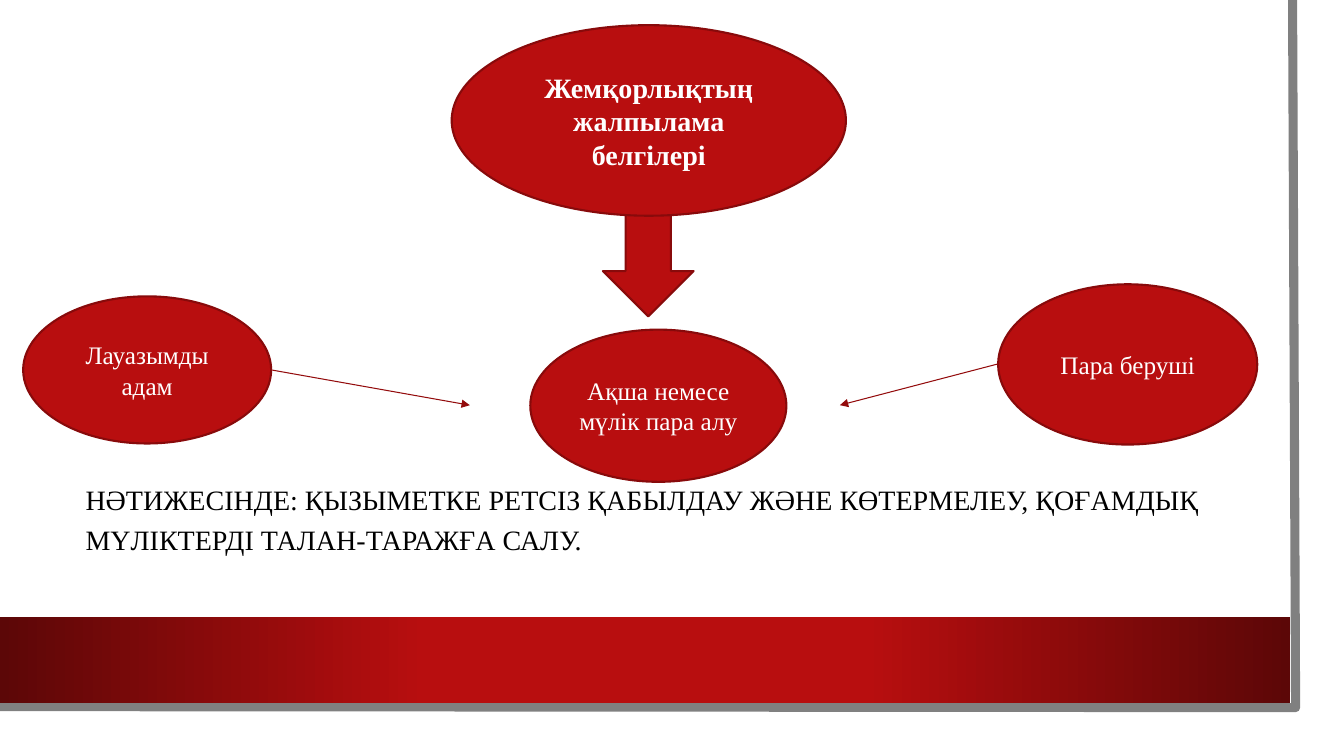
import pptx
import pptx.util
import pptx.dml.color
import pptx.enum.shapes
import pptx.enum.text
import pptx.oxml
import pptx.oxml.ns
from lxml import etree

Inches = pptx.util.Inches
Pt = pptx.util.Pt
SHAPES = pptx.enum.shapes.MSO_SHAPE
ALIGN = pptx.enum.text.PP_ALIGN
FONT = "Times New Roman"
COLORS = {
    "red": "B80E0F",
    "dark_red": "5C0707",
    "outline": "880A0B",
    "arrow": "930B0C",
    "frame": "808080",
    "white": "FFFFFF",
    "black": "000000",
}
OVALS = [
    (4.48, 0.25, 3.91, 1.89, "Жемқорлықтың жалпылама белгілері", 20, True),
    (0.23, 2.94, 2.46, 1.46, "Лауазымды адам", 18, False),
    (5.26, 3.27, 2.54, 1.51, "Ақша немесе мүлік пара алу", 18, False),
    (9.9, 2.82, 2.57, 1.59, "Пара беруші", 18, False),
]
ARROWS = [((2.69, 3.67), (4.66, 4.02)), ((9.9, 3.61), (8.33, 4.02))]
BAND_STOPS = [(0, "dark_red"), (33, "red"), (67, "red"), (100, "dark_red")]


def rgb(name):
    return pptx.dml.color.RGBColor.from_string(COLORS[name])


def set_line(line, color, width):
    line.color.rgb = rgb(color)
    line.width = Pt(width)


def write_text(shape, text, size, color, alignment, bold=False):
    frame = shape.text_frame
    frame.word_wrap = True
    frame.vertical_anchor = pptx.enum.text.MSO_ANCHOR.MIDDLE
    paragraph = frame.paragraphs[0]
    paragraph.alignment = alignment
    run = paragraph.add_run()
    run.text = text
    run.font.name = FONT
    run.font.size = Pt(size)
    run.font.bold = bold
    run.font.color.rgb = rgb(color)
    return paragraph


def add_red_shape(slide, kind, left, top, width, height):
    shape = slide.shapes.add_shape(
        kind, Inches(left), Inches(top), Inches(width), Inches(height))
    shape.shadow.inherit = False
    shape.fill.solid()
    shape.fill.fore_color.rgb = rgb("red")
    set_line(shape.line, "outline", 1.5)
    return shape


def add_oval(slide, left, top, width, height, text, size, bold):
    oval = add_red_shape(slide, SHAPES.OVAL, left, top, width, height)
    write_text(oval, text, size, "white", ALIGN.CENTER, bold)


def add_arrow(slide, start, end):
    points = [Inches(value) for value in start + end]
    arrow = slide.shapes.add_connector(
        pptx.enum.shapes.MSO_CONNECTOR.STRAIGHT, *points)
    set_line(arrow.line, "arrow", 0.75)
    line = arrow.line._get_or_add_ln()
    etree.SubElement(line, pptx.oxml.ns.qn("a:tailEnd"), type="triangle")
    etree.SubElement(arrow._element.spPr, pptx.oxml.ns.qn("a:effectLst"))


def add_frame(slide):
    builder = slide.shapes.build_freeform(Inches(12.82), 0)
    corners = [(12.85, 7.02), (-0.03, 7.01)]
    builder.add_line_segments(
        [(Inches(x), Inches(y)) for x, y in corners], close=False)
    frame = builder.convert_to_shape()
    frame.shadow.inherit = False
    frame.fill.background()
    set_line(frame.line, "frame", 6.5)


def add_band(slide):
    band = add_red_shape(slide, SHAPES.RECTANGLE, 0, 6.12, 12.8, 0.85)
    band.line.fill.background()
    band.fill.gradient()
    band.fill.gradient_angle = 0
    stops = band._element.spPr.find(".//" + pptx.oxml.ns.qn("a:gsLst"))
    for stop in list(stops):
        stops.remove(stop)
    for percent, color in BAND_STOPS:
        stop = etree.SubElement(
            stops, pptx.oxml.ns.qn("a:gs"), pos=str(percent * 1000))
        etree.SubElement(
            stop, pptx.oxml.ns.qn("a:srgbClr"), val=COLORS[color])


def add_conclusion(slide, text):
    box = slide.shapes.add_textbox(
        Inches(0.75), Inches(4.68), Inches(11.37), Inches(0.88))
    paragraph = write_text(box, text, 20, "black", ALIGN.LEFT)
    paragraph.line_spacing = 1.2


def main():
    presentation = pptx.Presentation()
    presentation.slide_width = Inches(13.33)
    presentation.slide_height = Inches(7.5)
    slide = presentation.slides.add_slide(presentation.slide_layouts[6])
    add_frame(slide)
    add_band(slide)
    add_red_shape(slide, SHAPES.DOWN_ARROW, 5.98, 2.01, 0.9, 1.13)
    add_conclusion(
        slide,
        "НӘТИЖЕСІНДЕ: ҚЫЗЫМЕТКЕ РЕТСІЗ ҚАБЫЛДАУ ЖӘНЕ КӨТЕРМЕЛЕУ, "
        "ҚОҒАМДЫҚ МҮЛІКТЕРДІ ТАЛАН-ТАРАЖҒА САЛУ.")
    for oval in OVALS:
        add_oval(slide, *oval)
    for start, end in ARROWS:
        add_arrow(slide, start, end)
    presentation.save("out.pptx")


if __name__ == "__main__":
    main()
